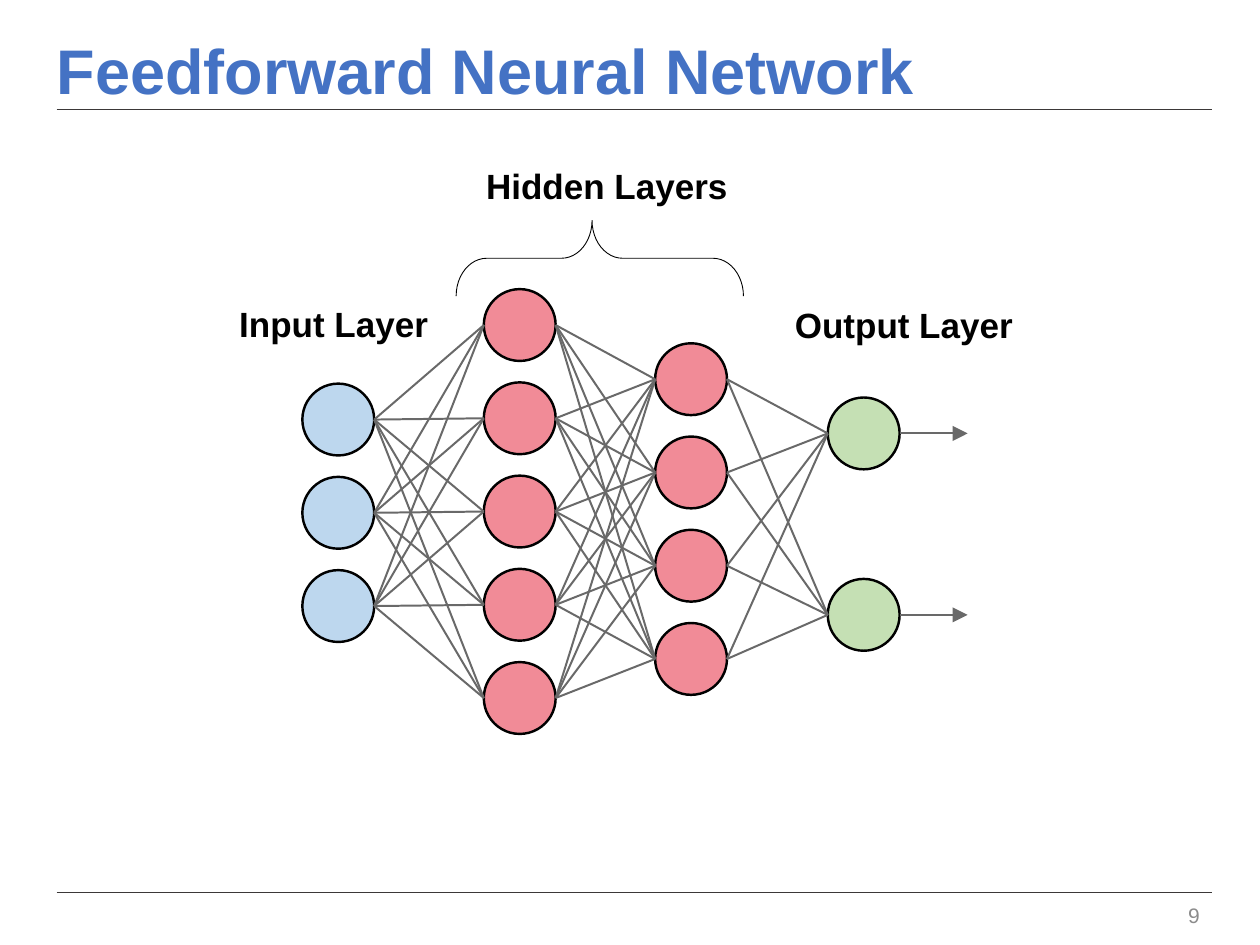
from dataclasses import dataclass
from itertools import pairwise, product

from lxml.etree import SubElement
from pptx import Presentation
from pptx.dml.color import RGBColor
from pptx.enum.shapes import MSO_CONNECTOR, MSO_SHAPE
from pptx.enum.text import MSO_ANCHOR, MSO_AUTO_SIZE, PP_ALIGN
from pptx.oxml.ns import qn
from pptx.util import Inches, Pt

NODE_SIZE = 0.57
FONT = "Arial"
BLACK, GRAY, RULE = "000000", "696969", "3B3838"
BLUE, PINK, GREEN = "BDD7EE", "F18B97", "C5E0B4"


@dataclass(frozen=True)
class Layer:
    left: float
    first_center: float
    count: int
    pitch: float
    fill: str

    @property
    def right(self) -> float:
        return self.left + NODE_SIZE

    @property
    def centers(self) -> list[float]:
        return [self.first_center + i * self.pitch for i in range(self.count)]


@dataclass(frozen=True)
class Label:
    text: str
    left: float
    top: float
    width: float


LAYERS = [
    Layer(2.4, 3.33, 3, 0.74, BLUE),
    Layer(3.84, 2.58, 5, 0.74, PINK),
    Layer(5.2, 3.01, 4, 0.74, PINK),
    Layer(6.57, 3.44, 2, 1.44, GREEN),
]
LABELS = [
    Label("Input Layer", 1.8, 2.35, 1.71),
    Label("Output Layer", 6.21, 2.36, 1.95),
    Label("Hidden Layers", 3.76, 1.26, 2.14),
]


def rgb(color: str) -> RGBColor:
    return RGBColor.from_string(color)


def write(tf, text: str, *, size: float, color: str, bold: bool = False,
          align=PP_ALIGN.LEFT, anchor=MSO_ANCHOR.TOP, wrap: bool = True):
    """Put one formatted paragraph in a text frame and return it."""
    tf.word_wrap = wrap
    tf.vertical_anchor = anchor
    p = tf.paragraphs[0]
    p.alignment = align
    r = p.add_run()
    r.text = text
    r.font.name, r.font.size, r.font.bold = FONT, Pt(size), bold
    r.font.color.rgb = rgb(color)
    return p


def add_line(slide, start: tuple, end: tuple, color: str = GRAY,
             width: float = 1.13) -> None:
    c = slide.shapes.add_connector(
        MSO_CONNECTOR.STRAIGHT, *(Inches(v) for v in (*start, *end)))
    c.line.color.rgb = rgb(color)
    c.line.width = Pt(width)
    SubElement(c._element.spPr, qn("a:effectLst"))


def add_text(slide, text: str, left: float, top: float, width: float,
             height: float, **fmt) -> None:
    box = slide.shapes.add_textbox(*(Inches(v) for v in (left, top, width, height)))
    write(box.text_frame, text, **fmt)


def add_title(slide, text: str) -> None:
    sp = slide.shapes.title
    sp.left, sp.top, sp.width, sp.height = (
        Inches(v) for v in (0.45, 0.22, 9.17, 0.73))
    tf = sp.text_frame
    tf.auto_size = MSO_AUTO_SIZE.NONE
    tf.margin_left = 0
    p = write(tf, text, size=36, color="4472C4", bold=True, anchor=MSO_ANCHOR.MIDDLE)
    p.line_spacing = 0.9


def add_node(slide, left: float, center: float, fill: str) -> None:
    sp = slide.shapes.add_shape(
        MSO_SHAPE.OVAL, Inches(left), Inches(center - NODE_SIZE / 2),
        Inches(NODE_SIZE), Inches(NODE_SIZE))
    sp.shadow.inherit = False
    sp.fill.solid()
    sp.fill.fore_color.rgb = rgb(fill)
    sp.line.color.rgb = rgb(BLACK)
    sp.line.width = Pt(1.38)


def add_output_arrow(slide, left: float, y: float) -> None:
    head, tip, half = 7.56, 7.68, 0.06
    add_line(slide, (left, y), (head, y))
    builder = slide.shapes.build_freeform(
        Inches(head), Inches(y - half), scale=1.0)
    builder.add_line_segments(
        [(Inches(tip), Inches(y)), (Inches(head), Inches(y + half))], close=True)
    sp = builder.convert_to_shape()
    sp.shadow.inherit = False
    sp.fill.solid()
    sp.fill.fore_color.rgb = rgb(GRAY)
    sp.line.fill.background()


def add_hidden_brace(slide) -> None:
    sp = slide.shapes.add_shape(
        MSO_SHAPE.LEFT_BRACE, Inches(4.46), Inches(0.91), Inches(0.6), Inches(2.28))
    sp.rotation = 90
    sp.adjustments[0], sp.adjustments[1] = 0.404, 0.527
    sp.shadow.inherit = False
    sp.fill.background()
    sp.line.color.rgb = rgb(BLACK)
    sp.line.width = Pt(0.5)


def main() -> None:
    prs = Presentation()
    prs.slide_width, prs.slide_height = Inches(10), Inches(7.5)
    slide = prs.slides.add_slide(prs.slide_layouts[5])

    for y in (0.87, 7.08):
        add_line(slide, (0.45, y), (9.62, y), RULE, 0.5)
    add_title(slide, "Feedforward Neural Network")
    add_text(slide, "9", 7.37, 7.06, 2.25, 0.4, size=12, color="8C8C8C",
             align=PP_ALIGN.RIGHT, anchor=MSO_ANCHOR.MIDDLE)
    for label in LABELS:
        add_text(slide, label.text, label.left, label.top, label.width, 0.44,
                 size=20, color=BLACK, bold=True, wrap=False)
    add_hidden_brace(slide)

    for layer in LAYERS:
        for y in layer.centers:
            add_node(slide, layer.left, y, layer.fill)
    for a, b in pairwise(LAYERS):
        for y1, y2 in product(a.centers, b.centers):
            add_line(slide, (a.right, y1), (b.left, y2))
    for y in LAYERS[-1].centers:
        add_output_arrow(slide, LAYERS[-1].right, y)

    prs.save("out.pptx")


if __name__ == "__main__":
    main()
